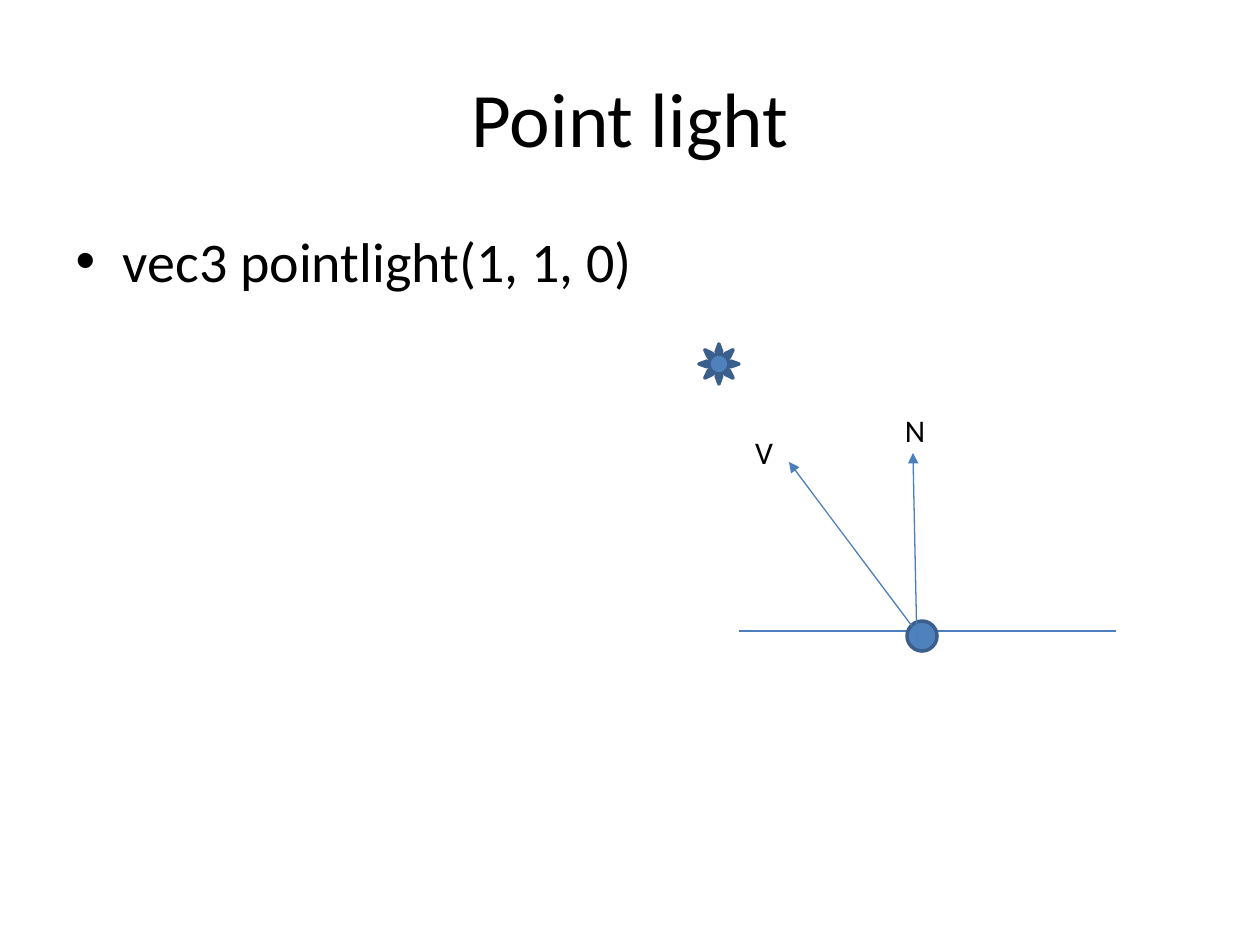
from dataclasses import dataclass

from lxml.etree import SubElement
from pptx import Presentation
from pptx.dml.color import RGBColor
from pptx.enum.shapes import MSO_CONNECTOR, MSO_SHAPE
from pptx.enum.text import MSO_ANCHOR, MSO_AUTO_SIZE, PP_ALIGN
from pptx.oxml.ns import qn
from pptx.util import Pt

SCALE = 914400 / 126  # EMU in one px


@dataclass(frozen=True)
class Theme:
    font: str = "Calibri"
    ink: str = "000000"
    fill: str = "4F81BD"
    edge: str = "3A5F8C"
    line: str = "4B7EBC"
    title: int = 44
    body: int = 32
    label: int = 18
    thick: float = 2
    thin: float = 0.75


THEME = Theme()


def px(*vals):
    return [round(val * SCALE) for val in vals]


def place(shape, *box):
    shape.left, shape.top, shape.width, shape.height = px(*box)


def write(shape, text, size, align=None):
    para = shape.text_frame.paragraphs[0]
    para.text = text
    para.alignment = align
    font = para.font
    font.name, font.size = THEME.font, Pt(size)
    font.color.rgb = RGBColor.from_string(THEME.ink)


def add_mark(slide, kind, *box):
    mark = slide.shapes.add_shape(kind, *px(*box))
    mark.shadow.inherit = False
    mark.fill.solid()
    mark.fill.fore_color.rgb = RGBColor.from_string(THEME.fill)
    mark.line.color.rgb = RGBColor.from_string(THEME.edge)
    mark.line.width = Pt(THEME.thick)


def add_line(slide, start, end, arrow=False):
    line = slide.shapes.add_connector(MSO_CONNECTOR.STRAIGHT, *px(*start, *end))
    line.line.color.rgb = RGBColor.from_string(THEME.line)
    line.line.width = Pt(THEME.thin)
    if arrow:
        SubElement(line.line._get_or_add_ln(), qn("a:tailEnd"), type="triangle")
    SubElement(line._element.spPr, qn("a:effectLst"))


def add_label(slide, text, left, top):
    box = slide.shapes.add_textbox(*px(left, top, 100, 51))
    box.text_frame.word_wrap = True
    box.text_frame.auto_size = MSO_AUTO_SIZE.SHAPE_TO_FIT_TEXT
    write(box, text, THEME.label, PP_ALIGN.CENTER)


def main():
    deck = Presentation()
    deck.slide_width, deck.slide_height = px(1260, 945)
    slide = deck.slides.add_slide(deck.slide_layouts[1])

    # Title and list
    title, body = slide.placeholders
    place(title, 63, 38, 1134, 158)
    title.text_frame.vertical_anchor = MSO_ANCHOR.MIDDLE
    write(title, "Point light", THEME.title, PP_ALIGN.CENTER)
    place(body, 63, 220, 1134, 624)
    write(body, "vec3 pointlight(1, 1, 0)", THEME.body)

    # Light, ground and lit point
    add_mark(slide, MSO_SHAPE.SUN, 699, 344, 40, 40)
    add_line(slide, (739, 631), (1116, 631))
    add_mark(slide, MSO_SHAPE.OVAL, 907, 621, 30, 30)

    # Normal and view vectors
    add_line(slide, (917, 646), (913, 453), arrow=True)
    add_line(slide, (912, 626), (789, 462), arrow=True)
    add_label(slide, "N", 865, 405)
    add_label(slide, "V", 714, 427)

    deck.save("out.pptx")


if __name__ == "__main__":
    main()
